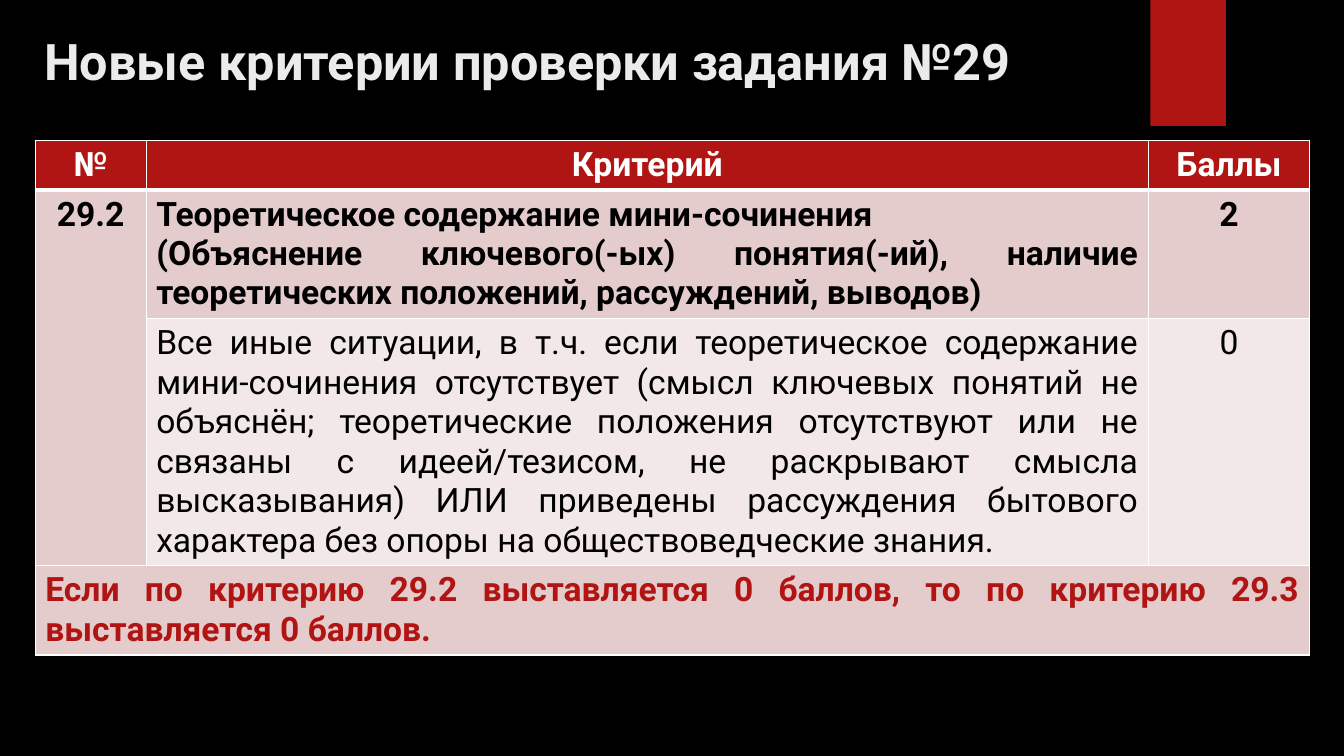
"""Build a slide with the new grading criteria for task 29."""
from lxml import etree
from pptx import Presentation
from pptx.dml.color import RGBColor
from pptx.enum.shapes import MSO_SHAPE
from pptx.enum.text import MSO_ANCHOR, MSO_AUTO_SIZE, PP_ALIGN
from pptx.oxml.ns import qn
from pptx.util import Inches, Pt

BLACK = RGBColor(0x00, 0x00, 0x00)
WHITE = RGBColor(0xFF, 0xFF, 0xFF)
RED = RGBColor(0xB0, 0x15, 0x13)
TITLE_GRAY = RGBColor(0xEB, 0xEB, 0xEB)
PINK = RGBColor(0xE4, 0xCC, 0xCC)
PALE_PINK = RGBColor(0xF2, 0xE8, 0xE7)
LEFT, CENTER, JUSTIFY = PP_ALIGN.LEFT, PP_ALIGN.CENTER, PP_ALIGN.JUSTIFY
MIDDLE, TOP = MSO_ANCHOR.MIDDLE, MSO_ANCHOR.TOP
NO_AUTOFIT = MSO_AUTO_SIZE.NONE
RECTANGLE = MSO_SHAPE.RECTANGLE
FONT = "Roboto"


def format_text(frame, align, size, color, bold):
    for para in frame.paragraphs:
        para.alignment = align
        for span in para.runs:
            span.font.name = FONT
            span.font.size = Pt(size)
            span.font.color.rgb = color
            span.font.bold = bold


def add_border(cell, side, width):
    line = etree.SubElement(cell._tc.get_or_add_tcPr(), qn(f"a:ln{side}"), w=str(Pt(width)))
    fill = etree.SubElement(line, qn("a:solidFill"))
    etree.SubElement(fill, qn("a:srgbClr"), val=str(WHITE))


deck = Presentation()
deck.slide_width = Inches(13.33)
deck.slide_height = Inches(7.5)
page = deck.slides.add_slide(deck.slide_layouts[5])
page.background.fill.solid()
page.background.fill.fore_color.rgb = BLACK

ribbon = page.shapes.add_shape(RECTANGLE, Inches(11.41), 0, Inches(0.75), Inches(1.25))
ribbon.shadow.inherit = False
ribbon.fill.solid()
ribbon.fill.fore_color.rgb = RED
ribbon.line.fill.background()

title = page.shapes.title
title.left, title.top = Inches(0.34), Inches(0.22)
title.width, title.height = Inches(11.05), Inches(0.75)
title.text_frame.text = "Новые критерии проверки задания №29"
title.text_frame.auto_size = NO_AUTOFIT
title.text_frame.vertical_anchor = MIDDLE
format_text(title.text_frame, LEFT, 36, TITLE_GRAY, True)

criteria = [
    ["№", "Критерий", "Баллы"],
    ["29.2",
     "Теоретическое содержание мини-сочинения\n"
     "(Объяснение ключевого(-ых) понятия(-ий), наличие теоретических положений, "
     "рассуждений, выводов)",
     "2"],
    ["",
     "Все иные ситуации, в т.ч. если теоретическое содержание мини-сочинения "
     "отсутствует (смысл ключевых понятий не объяснён; теоретические положения "
     "отсутствуют или не связаны с идеей/тезисом, не раскрывают смысла высказывания) "
     "ИЛИ приведены рассуждения бытового характера без опоры на обществоведческие знания.",
     "0"],
    ["Если по критерию 29.2 выставляется 0 баллов, то по критерию 29.3 "
     "выставляется 0 баллов.", "", ""],
]
column_widths = [1.1, 9.94, 1.6]
row_heights = [0.49, 1.27, 2.45, 0.89]
row_styles = [(RED, WHITE, True), (PINK, BLACK, True), (PALE_PINK, BLACK, False), (PINK, RED, True)]

table = page.shapes.add_table(
    len(criteria), len(column_widths), Inches(0.35), Inches(1.39),
    Inches(sum(column_widths)), Inches(sum(row_heights))).table
for column, width in zip(table.columns, column_widths):
    column.width = Inches(width)
for row, height in zip(table.rows, row_heights):
    row.height = Inches(height)
table.cell(1, 0).merge(table.cell(2, 0))
table.cell(3, 0).merge(table.cell(3, 2))

for row_index, (texts, (fill, color, bold)) in enumerate(zip(criteria, row_styles)):
    for column_index, text in enumerate(texts):
        cell = table.cell(row_index, column_index)
        border_widths = {"L": 1, "R": 1, "T": 3 if row_index == 1 else 1,
                         "B": 3 if row_index == 0 else 1}
        for side, width in border_widths.items():
            add_border(cell, side, width)
        cell.fill.solid()
        cell.fill.fore_color.rgb = fill
        cell.vertical_anchor = TOP
        if text:
            cell.text_frame.text = text
            justified = row_index == 3 or (row_index > 0 and column_index == 1)
            format_text(cell.text_frame, JUSTIFY if justified else CENTER, 24, color, bold)

deck.save("out.pptx")
